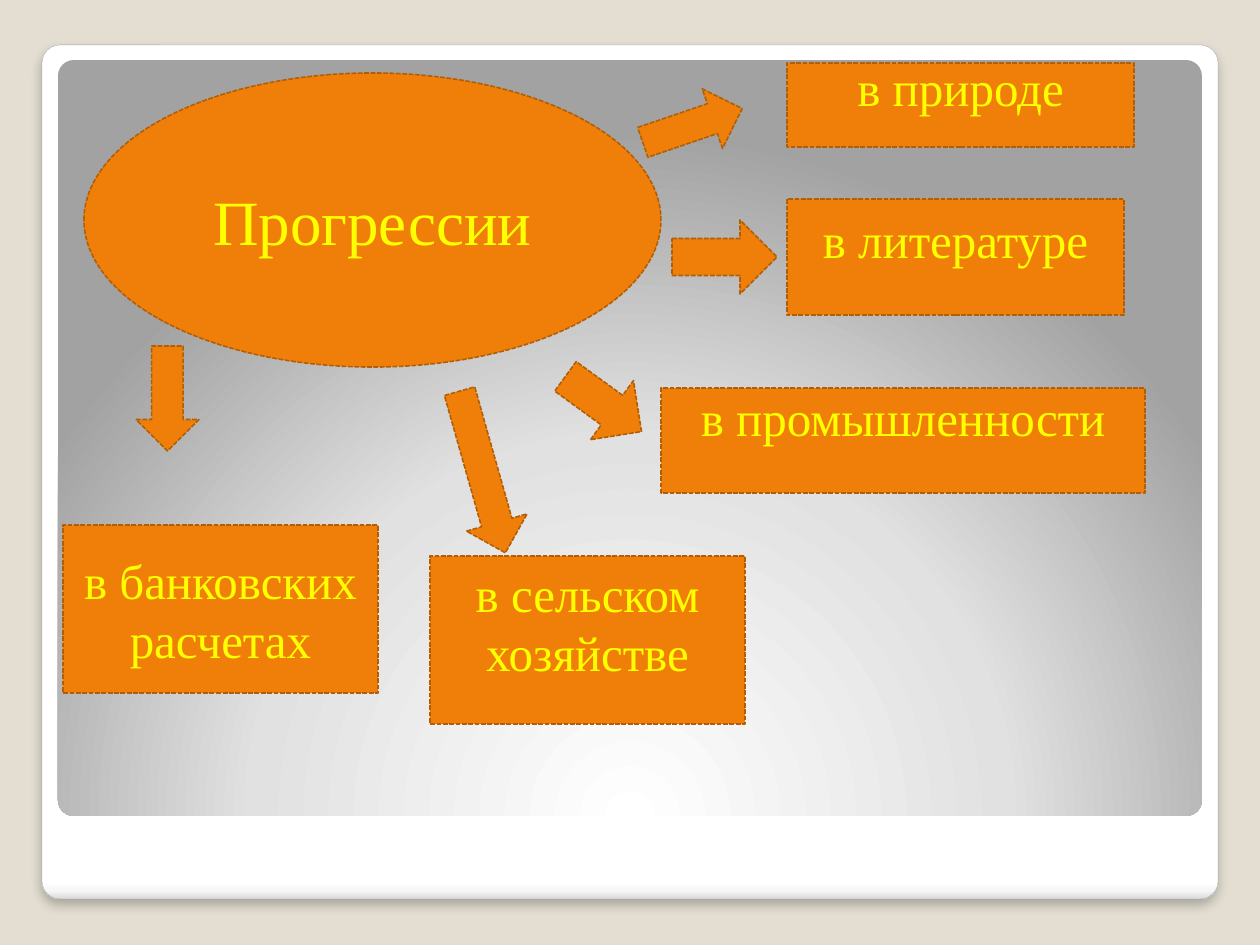
from lxml import etree
from pptx import Presentation
from pptx import util as u
from pptx.dml.color import RGBColor
from pptx.enum import dml, shapes, text

SCALE = 914400 / 126  # EMU in one px
NS = "http://schemas.openxmlformats.org/drawingml/2006/main"
SAND = RGBColor(0xE3, 0xDE, 0xD1)
GREY = RGBColor(0xA4, 0xA4, 0xA4)
ORANGE = RGBColor(0xF0, 0x7F, 0x09)
BROWN = RGBColor(0xB2, 0x5E, 0x07)
YELLOW = RGBColor(0xFF, 0xFF, 0x00)
FONT = "Times New Roman"
KIND = shapes.MSO_SHAPE

# Text, place in px, bottom inset in px
BOXES = [
    ("в природе", (787, 63, 347, 84), 42),
    ("в литературе", (787, 199, 337, 116), 42),
    ("в промышленности", (661, 388, 484, 105), 54),
    ("в банковских расчетах", (63, 525, 315, 168), 6),
    ("в сельском хозяйстве", (430, 556, 315, 168), 42),
]
# Kind, place in px, turn in degrees
ARROWS = [
    (KIND.RIGHT_ARROW, (640, 94, 105, 63), 341.2),
    (KIND.RIGHT_ARROW, (672, 220, 105, 74), 0),
    (KIND.DOWN_ARROW, (567, 357, 73, 94), 306),
    (KIND.DOWN_ARROW, (136, 346, 63, 105), 0),
    (KIND.DOWN_ARROW, (451, 388, 63, 168), 344.2),
]


def px(n):
    return u.Emu(round(n * SCALE))


def add(slide, kind, place):
    shape = slide.shapes.add_shape(kind, *map(px, place))
    shape.shadow.inherit = False
    return shape


def panel(slide, place, stops, path):
    """Rounded panel with a gradient fill."""
    shape = add(slide, KIND.ROUNDED_RECTANGLE, place)
    shape.adjustments[0] = 0.021
    shape.line.fill.background()
    marks = "".join(
        f'<a:gs pos="{at * 1000}"><a:srgbClr val="{tone}"/></a:gs>'
        for at, tone in stops)
    fill = etree.fromstring(
        f'<a:gradFill xmlns:a="{NS}" rotWithShape="1">'
        f'<a:gsLst>{marks}</a:gsLst>{path}</a:gradFill>')
    shape._element.spPr.insert(2, fill)
    return shape


def shade(shape):
    """Soft shadow below a shape."""
    effects = shape._element.spPr.find(f"{{{NS}}}effectLst")
    effects.append(etree.fromstring(
        f'<a:outerShdw xmlns:a="{NS}" blurRad="76200" dist="50800" '
        'dir="5400000" algn="tl" rotWithShape="0">'
        '<a:srgbClr val="000000"><a:alpha val="25000"/></a:srgbClr>'
        '</a:outerShdw>'))


def block(slide, kind, place, turn=0):
    """Orange shape with a dashed outline."""
    shape = add(slide, kind, place)
    shape.rotation = turn
    shape.fill.solid()
    shape.fill.fore_color.rgb = ORANGE
    shape.line.color.rgb = BROWN
    shape.line.width = u.Pt(0.9)
    shape.line.dash_style = dml.MSO_LINE.SQUARE_DOT
    return shape


def label(shape, words, size, inset=6):
    frame = shape.text_frame
    frame.word_wrap = True
    frame.vertical_anchor = text.MSO_ANCHOR.MIDDLE
    frame.margin_bottom = px(inset)
    para = frame.paragraphs[0]
    para.alignment = text.PP_ALIGN.CENTER
    run = para.add_run()
    run.text = words
    run.font.size = u.Pt(size)
    run.font.name = FONT
    run.font.color.rgb = YELLOW


def main():
    deck = Presentation()
    deck.slide_width, deck.slide_height = px(1260), px(945)
    slide = deck.slides.add_slide(deck.slide_layouts[6])
    slide.background.fill.solid()
    slide.background.fill.fore_color.rgb = SAND

    # Backdrop
    card = panel(slide, (42, 45, 1176, 854),
                 [(0, "FFFFFF"), (98, "FFFFFF"), (99, "F7F7F7"),
                  (100, "DADADA")],
                 '<a:lin ang="5400000" scaled="0"/>')
    card.line.color.rgb = GREY
    card.line.width = u.Pt(0.16)
    shade(card)
    panel(slide, (58, 60, 1144, 756),
          [(0, "FFFFFF"), (55, "E1E1E1"), (100, "A2A2A2")],
          '<a:path path="circle"><a:fillToRect l="50000" t="175000" '
          'r="50000" b="-75000"/></a:path>')

    # Topic, its fields and the arrows between
    label(block(slide, KIND.OVAL, (84, 73, 577, 294)), "Прогрессии", 36)
    for kind, place, turn in ARROWS:
        block(slide, kind, place, turn)
    for words, place, inset in BOXES:
        label(block(slide, KIND.RECTANGLE, place), words, 28, inset)

    deck.save("out.pptx")


if __name__ == "__main__":
    main()
